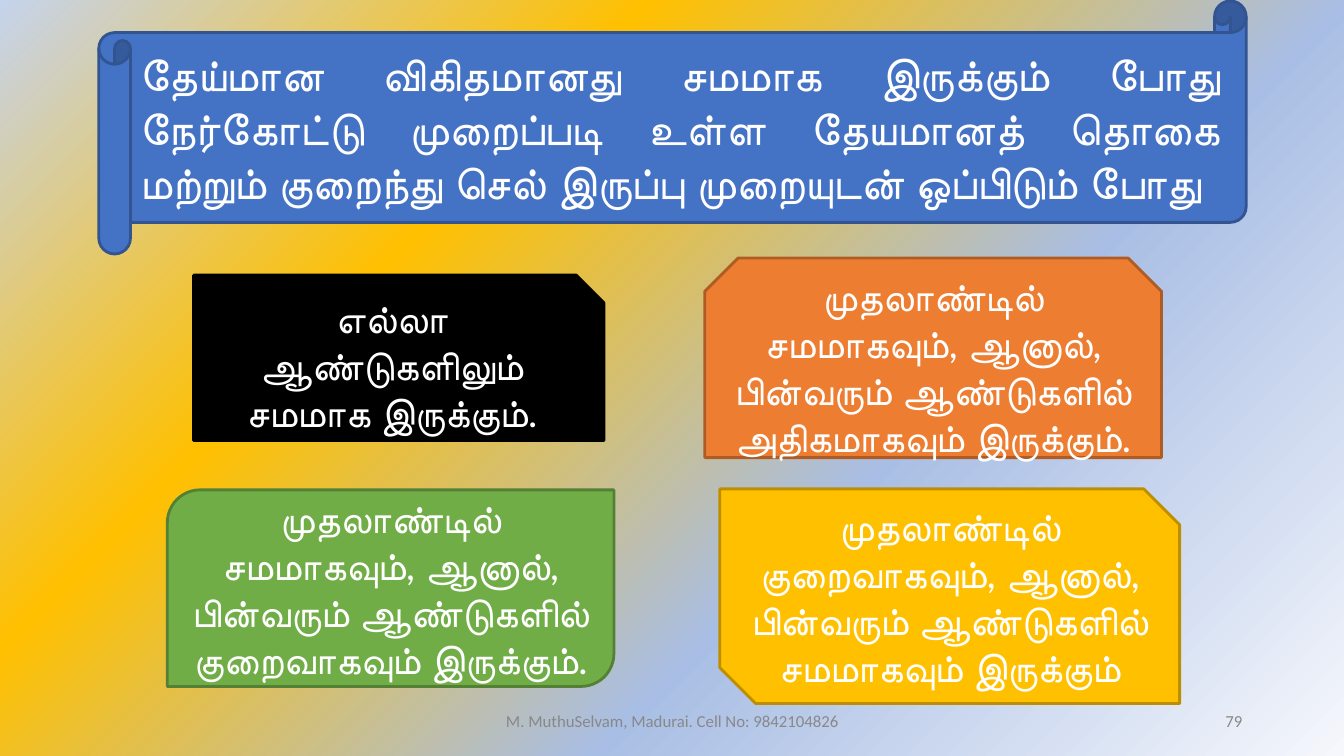
from dataclasses import dataclass

from pptx import Presentation
from pptx.dml.color import RGBColor
from pptx.enum.shapes import MSO_SHAPE
from pptx.enum.text import MSO_ANCHOR, PP_ALIGN
from pptx.oxml import parse_xml
from pptx.oxml.ns import nsdecls
from pptx.util import Inches, Pt

SCROLL = MSO_SHAPE.HORIZONTAL_SCROLL
SNIP_ONE = MSO_SHAPE.SNIP_1_RECTANGLE
SNIP_TOP = MSO_SHAPE.SNIP_2_SAME_RECTANGLE
SNIP_DIAGONAL = MSO_SHAPE.SNIP_2_DIAG_RECTANGLE
ROUND_DIAGONAL = MSO_SHAPE.ROUND_2_DIAG_RECTANGLE
MIDDLE = MSO_ANCHOR.MIDDLE
CENTER, RIGHT, JUSTIFY = PP_ALIGN.CENTER, PP_ALIGN.RIGHT, PP_ALIGN.JUSTIFY


@dataclass(frozen=True)
class Theme:
    """Colours, fonts and type sizes of the slide."""
    backdrop: tuple = ((0, "F5F7FC"), (36, "A9BEE4"), (69, "FFC000"), (100, "C5D3ED"))
    blue: tuple = ("4472C4", "325491")
    black: tuple = ("000000", "000000")
    orange: tuple = ("ED7D31", "AF5C24")
    gold: tuple = ("FFC000", "BD8E00")
    green: tuple = ("70AD47", "538035")
    light: str = "FFFFFF"
    muted: str = "888888"
    body_font: str = "Lato"
    footer_font: str = "Calibri"
    question_size: int = 32
    answer_size: int = 28
    footer_size: int = 12
    outline: int = 2


THEME = Theme()
WIDTH, HEIGHT = Inches(13.33), Inches(7.5)

QUESTION = ("தேய்மான விகிதமானது சமமாக இருக்கும் போது நேர்கோட்டு முறைப்படி உள்ள "
            "தேயமானத் தொகை மற்றும் குறைந்து செல் இருப்பு முறையுடன் ஒப்பிடும் போது")
ANSWERS = (
    (SNIP_ONE, (14.4, 36.4, 30.53, 21.87), THEME.black,
     "எல்லா ஆண்டுகளிலும் சமமாக இருக்கும்."),
    (SNIP_TOP, (52.44, 34.13, 33.98, 26.4), THEME.orange,
     "முதலாண்டில் சமமாகவும், ஆனால், பின்வரும் ஆண்டுகளில் அதிகமாகவும் இருக்கும்."),
    (SNIP_DIAGONAL, (53.56, 64.67, 34.21, 28.4), THEME.gold,
     "முதலாண்டில் குறைவாகவும், ஆனால், பின்வரும் ஆண்டுகளில் சமமாகவும் இருக்கும்"),
    (ROUND_DIAGONAL, (12.45, 64.8, 33.23, 26), THEME.green,
     "முதலாண்டில் சமமாகவும், ஆனால், பின்வரும் ஆண்டுகளில் குறைவாகவும் இருக்கும்."),
)


def place(box):
    """Turn percentages of the slide into left, top, width and height."""
    return [int(share * side / 100) for share, side in zip(box, (WIDTH, HEIGHT) * 2)]


def write(frame, text, align, font_name, size, color):
    """Fill a text frame with one middle-anchored, wrapped paragraph."""
    frame.word_wrap = True
    frame.vertical_anchor = MIDDLE
    paragraph = frame.paragraphs[0]
    paragraph.text = text
    paragraph.alignment = align
    paragraph.font.name = font_name
    paragraph.font.size = Pt(size)
    paragraph.font.color.rgb = RGBColor.from_string(color)


def paint_backdrop(slide):
    """Give the slide a gradient radiating from its lower right corner."""
    stops = "".join(f'<a:gs pos="{share * 1000}"><a:srgbClr val="{color}"/></a:gs>'
                    for share, color in THEME.backdrop)
    backdrop = parse_xml(
        f'<p:bg {nsdecls("p", "a")}><p:bgPr><a:gradFill><a:gsLst>{stops}</a:gsLst>'
        '<a:path path="circle"><a:fillToRect l="100000" t="100000"/></a:path>'
        '<a:tileRect r="-100000" b="-100000"/></a:gradFill><a:effectLst/></p:bgPr></p:bg>')
    slide.element.cSld.insert(0, backdrop)


def add_panel(slide, preset, box, colors, text, align, size):
    """Draw an outlined preset shape holding light text."""
    panel = slide.shapes.add_shape(preset, *place(box))
    fill, line = map(RGBColor.from_string, colors)
    panel.shadow.inherit = False
    panel.fill.solid()
    panel.fill.fore_color.rgb = fill
    panel.line.color.rgb = line
    panel.line.width = Pt(THEME.outline)
    write(panel.text_frame, text, align, THEME.body_font, size, THEME.light)


def add_footer_text(slide, box, text, align):
    """Write one muted footer entry."""
    entry = slide.shapes.add_textbox(*place(box))
    write(entry.text_frame, text, align, THEME.footer_font, THEME.footer_size, THEME.muted)


def build_quiz_slide(slide):
    """Lay out the question scroll, the four answers and the footer."""
    paint_backdrop(slide)
    add_panel(slide, SCROLL, (7.35, 0.13, 85.37, 33.47), THEME.blue,
              QUESTION, JUSTIFY, THEME.question_size)
    for preset, box, colors, answer in ANSWERS:
        add_panel(slide, preset, box, colors, answer, CENTER, THEME.answer_size)
    add_footer_text(slide, (33.16, 92.67, 33.76, 5.33),
                    "M. MuthuSelvam, Madurai. Cell No: 9842104826", CENTER)
    add_footer_text(slide, (70.67, 92.67, 22.5, 5.33), "79", RIGHT)


def main():
    """Create and save the presentation."""
    deck = Presentation()
    deck.slide_width, deck.slide_height = WIDTH, HEIGHT
    build_quiz_slide(deck.slides.add_slide(deck.slide_layouts[6]))
    deck.save("out.pptx")


if __name__ == "__main__":
    main()
